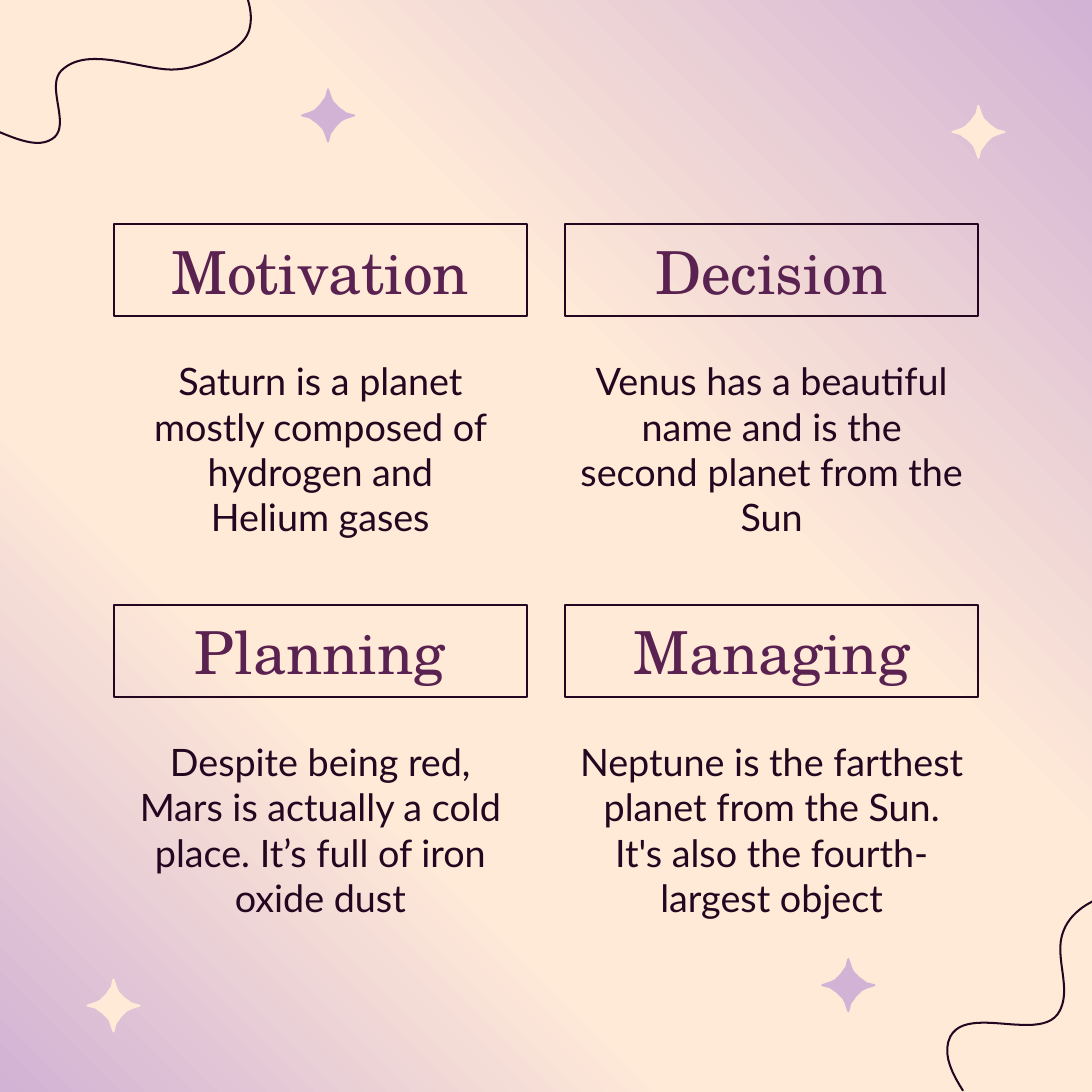
from dataclasses import dataclass
from lxml.etree import SubElement
from pptx import Presentation
from pptx.dml.color import RGBColor as RGB
from pptx.enum.shapes import MSO_SHAPE as SHAPE
from pptx.enum.text import MSO_ANCHOR as ANCHOR, PP_ALIGN as ALIGN
from pptx.oxml.ns import qn
from pptx.util import Inches, Pt


@dataclass(frozen=True)
class Theme:
    cream: str = "FFE9D7"
    lilac: str = "D2B2D5"
    plum: str = "5A2250"
    ink: str = "250620"
    title_font: str = "TeX Gyre Schola"
    body_font: str = "Lato"
    title_size: int = 44
    body_size: int = 28
    line: float = 1.5


theme = Theme()
SIDE = 11.25

deck = Presentation()
deck.slide_width = deck.slide_height = Inches(SIDE)
page = deck.slides.add_slide(deck.slide_layouts[6])


def write(box, text, font, size, color, anchor):
    frame = box.text_frame
    frame.word_wrap = True
    frame.vertical_anchor = anchor
    frame.margin_left = frame.margin_right = Inches(0.14)
    frame.margin_top = frame.margin_bottom = Inches(0.14)
    for number, line in enumerate(text.split("\n")):
        para = frame.add_paragraph() if number else frame.paragraphs[0]
        para.alignment = ALIGN.CENTER
        span = para.add_run()
        span.text = line
        span.font.name = font
        span.font.size = Pt(size)
        span.font.color.rgb = RGB.from_string(color)


def outline(points, close):
    """Add a freeform through points given in inches."""
    corners = [(Inches(x), Inches(y)) for x, y in points]
    builder = page.shapes.build_freeform(*corners[0])
    builder.add_line_segments(corners[1:], close=close)
    shape = builder.convert_to_shape()
    shape.shadow.inherit = False
    return shape


# Diagonal background: lilac corners, cream band
backdrop = page.background.fill
backdrop.gradient()
backdrop.gradient_angle = 45
stops = page.element.find(".//" + qn("a:gsLst"))
for stop in list(stops):
    stops.remove(stop)
for percent, color in ((0, theme.lilac), (31, theme.cream), (50, theme.cream),
                       (61, theme.cream), (100, theme.lilac)):
    stop = SubElement(stops, qn("a:gs"), pos=str(percent * 1000))
    SubElement(stop, qn("a:srgbClr"), val=color)

# Sparkles: one quarter of the outline, turned four times
quarter = [(0, -0.28), (0.01, -0.27), (0.04, -0.18), (0.06, -0.14), (0.09, -0.11),
           (0.12, -0.08), (0.15, -0.06), (0.19, -0.03), (0.27, -0.01)]
sparkle = []
for turn in range(4):
    sparkle += quarter
    quarter = [(-y, x) for x, y in quarter]

for center_x, center_y, color in ((10.08, 1.36, theme.cream), (3.38, 1.19, theme.lilac),
                                  (1.17, 10.36, theme.cream), (8.74, 10.15, theme.lilac)):
    star = outline([(center_x + x, center_y + y) for x, y in sparkle], close=True)
    star.fill.solid()
    star.fill.fore_color.rgb = RGB.from_string(color)
    star.line.fill.background()

# Corner waves: chained cubic curves, kept to the part on the slide
STEPS = 24
waves = (
    [(2.38, -0.39), (2.49, -0.17), (2.63, 0.07), (2.57, 0.3),
     (2.54, 0.42), (2.42, 0.51), (2.31, 0.56), (2.12, 0.66), (1.89, 0.74), (1.67, 0.71),
     (1.32, 0.67), (0.87, 0.49), (0.63, 0.73), (0.47, 0.9), (0.74, 1.3), (0.54, 1.43),
     (0.24, 1.63), (-0.34, 1.04), (-0.54, 1.34)],
    [(11.7, 9.18), (11.41, 9.18), (11.04, 9.33), (10.95, 9.61),
     (10.86, 9.86), (11.04, 10.17), (10.92, 10.41), (10.75, 10.76), (9.97, 10.34), (9.79, 10.68),
     (9.57, 11.13), (10.57, 11.76), (10.22, 12.11)],
)
for knots in waves:
    track = []
    for first in range(0, len(knots) - 1, 3):
        for step in range(STEPS):
            t = step / STEPS
            weights = ((1 - t) ** 3, 3 * t * (1 - t) ** 2, 3 * t ** 2 * (1 - t), t ** 3)
            track.append(tuple(sum(w * knot[axis] for w, knot in zip(weights, knots[first:first + 4]))
                               for axis in (0, 1)))
    bleed = 0.04
    wave = outline([point for point in track
                    if all(-bleed <= value <= SIDE + bleed for value in point)], close=False)
    wave.fill.background()
    wave.line.color.rgb = RGB.from_string(theme.ink)
    wave.line.width = Pt(theme.line)

# Two by two cards
MARGIN, GUTTER = 1.17, 0.39
CARD_WIDTH = (SIDE - 2 * MARGIN - GUTTER) / 2
TOP, ROW_STEP = 2.31, 3.92
TITLE_HEIGHT, BODY_OFFSET, BODY_HEIGHT = 0.95, 1.24, 2.22
cards = (
    ("Motivation", "Saturn is a planet mostly composed of hydrogen and\nHelium gases"),
    ("Decision", "Venus has a beautiful name and is the second planet from the Sun"),
    ("Planning", "Despite being red, Mars is actually a cold place. It’s full of iron oxide dust"),
    ("Managing", "Neptune is the farthest planet from the Sun. It's also the fourth-largest object"),
)
for index, (title, body) in enumerate(cards):
    row, column = divmod(index, 2)
    left = Inches(MARGIN + column * (CARD_WIDTH + GUTTER))
    top = TOP + row * ROW_STEP
    width = Inches(CARD_WIDTH)

    title_box = page.shapes.add_shape(SHAPE.RECTANGLE, left, Inches(top), width, Inches(TITLE_HEIGHT))
    title_box.shadow.inherit = False
    title_box.fill.background()
    title_box.line.color.rgb = RGB.from_string(theme.ink)
    title_box.line.width = Pt(theme.line)
    write(title_box, title, font=theme.title_font, size=theme.title_size,
          color=theme.plum, anchor=ANCHOR.MIDDLE)

    body_box = page.shapes.add_textbox(left, Inches(top + BODY_OFFSET), width, Inches(BODY_HEIGHT))
    write(body_box, body, font=theme.body_font, size=theme.body_size,
          color=theme.ink, anchor=ANCHOR.TOP)

deck.save("out.pptx")
